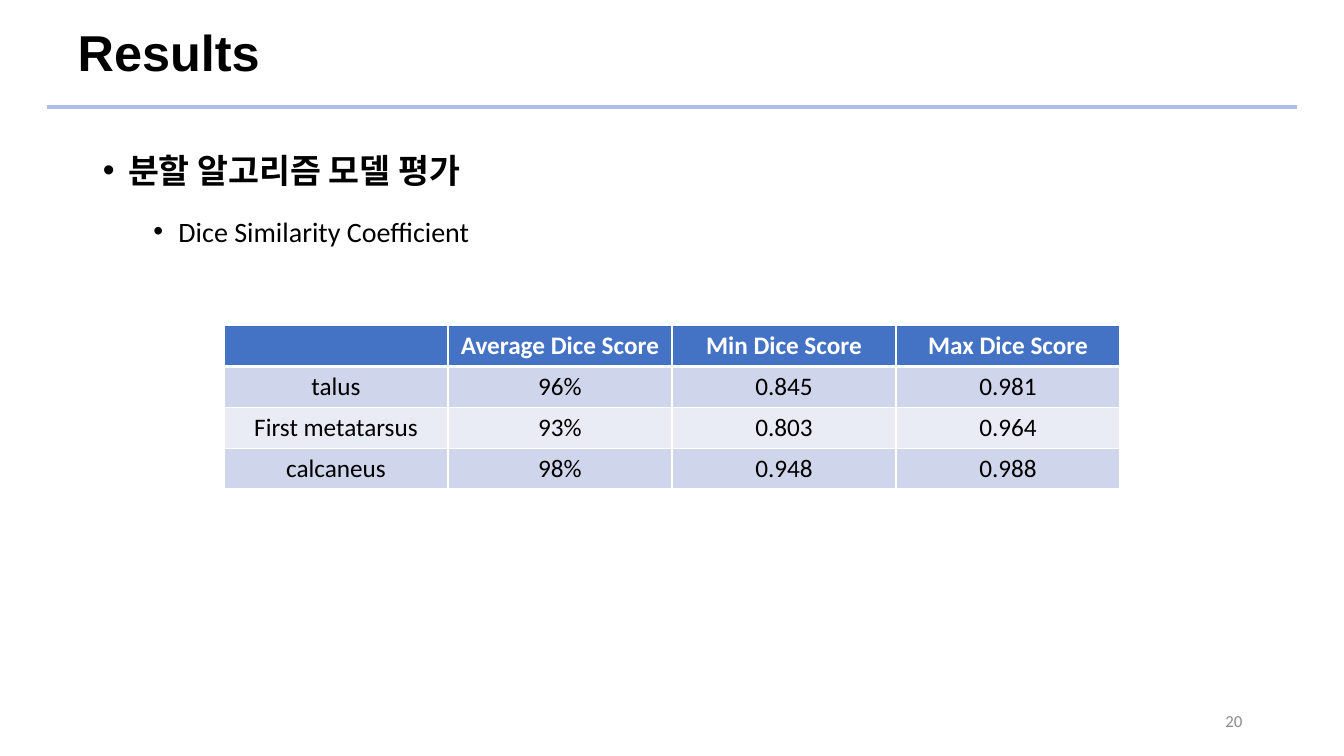
from lxml.etree import SubElement
from pptx import Presentation
from pptx.dml.color import RGBColor
from pptx.enum.shapes import MSO_CONNECTOR
from pptx.enum.text import MSO_ANCHOR, MSO_AUTO_SIZE, PP_ALIGN
from pptx.oxml.ns import qn
from pptx.util import Inches, Pt

BLACK = RGBColor(0x00, 0x00, 0x00)
WHITE = RGBColor(0xFF, 0xFF, 0xFF)
GRAY = RGBColor(0x8C, 0x8C, 0x8C)
RULE_BLUE = RGBColor(0xAB, 0xC0, 0xE4)
HEADER_BLUE = RGBColor(0x44, 0x72, 0xC4)
ODD_ROW = RGBColor(0xCF, 0xD5, 0xEA)
EVEN_ROW = RGBColor(0xE9, 0xEB, 0xF5)


def write_text(paragraph, text, size, font="Calibri", color=BLACK, bold=False,
               align=PP_ALIGN.LEFT, line_spacing=1.0, space_before=0, indent=None):
    if indent is not None:
        properties = paragraph._p.get_or_add_pPr()
        properties.set("marL", str(Inches(indent)))
        properties.set("indent", str(Inches(-0.25)))
        SubElement(properties, qn("a:buFont"), typeface="Arial")
        SubElement(properties, qn("a:buChar"), char="•")
    paragraph.alignment = align
    paragraph.line_spacing = line_spacing
    paragraph.space_before = Pt(space_before)
    run = paragraph.add_run()
    run.text = text
    run.font.size = Pt(size)
    run.font.name = font
    run.font.bold = bold
    run.font.color.rgb = color


def add_border(cell, side, points):
    line = SubElement(cell._tc.get_or_add_tcPr(), qn(f"a:ln{side}"), w=str(Pt(points)))
    fill = SubElement(line, qn("a:solidFill"))
    SubElement(fill, qn("a:srgbClr"), val=str(WHITE))


presentation = Presentation()
presentation.slide_width = Inches(13.33)
presentation.slide_height = Inches(7.5)
slide = presentation.slides.add_slide(presentation.slide_layouts[1])

rule = slide.shapes.add_connector(
    MSO_CONNECTOR.STRAIGHT, Inches(0.47), Inches(1.06), Inches(12.86), Inches(1.06))
rule.line.color.rgb = RULE_BLUE
rule.line.width = Pt(3)
SubElement(rule._element.spPr, qn("a:effectLst"))

title = slide.shapes.title
body = slide.placeholders[1]
page_number = slide.shapes.add_textbox(0, 0, 0, 0)
for shape, bounds, anchor in (
    (title, (0.67, 0.22, 11.5, 0.65), MSO_ANCHOR.MIDDLE),
    (body, (0.92, 1.24, 11.5, 5.44), MSO_ANCHOR.TOP),
    (page_number, (9.42, 6.95, 3, 0.4), MSO_ANCHOR.MIDDLE),
):
    shape.left, shape.top, shape.width, shape.height = map(Inches, bounds)
    shape.text_frame.word_wrap = True
    shape.text_frame.auto_size = MSO_AUTO_SIZE.NONE
    shape.text_frame.vertical_anchor = anchor

write_text(title.text_frame.paragraphs[0], "Results", 36, font="Arial", bold=True,
           line_spacing=0.9)
write_text(body.text_frame.paragraphs[0], "분할 알고리즘 모델 평가", 24, font="Arial",
           bold=True, line_spacing=1.5, indent=0.25)
metric = body.text_frame.add_paragraph()
metric.level = 1
write_text(metric, "Dice Similarity Coefficient", 20, line_spacing=1.5,
           space_before=5, indent=0.75)
write_text(page_number.text_frame.paragraphs[0], "20", 12, color=GRAY,
           align=PP_ALIGN.RIGHT)

scores = (
    ("", "Average Dice Score", "Min Dice Score", "Max Dice Score"),
    ("talus", "96%", "0.845", "0.981"),
    ("First metatarsus", "93%", "0.803", "0.964"),
    ("calcaneus", "98%", "0.948", "0.988"),
)
column_width = presentation.slide_width // 6
table = slide.shapes.add_table(
    len(scores), len(scores[0]), column_width, Inches(3.23),
    column_width * len(scores[0]), Inches(1.62)).table

for row, values in enumerate(scores):
    is_header = row == 0
    row_fill = HEADER_BLUE if is_header else ODD_ROW if row % 2 else EVEN_ROW
    for column, value in enumerate(values):
        cell = table.cell(row, column)
        add_border(cell, "L", 1)
        add_border(cell, "R", 1)
        add_border(cell, "T", 3 if row == 1 else 1)
        add_border(cell, "B", 3 if is_header else 1)
        cell.fill.solid()
        cell.fill.fore_color.rgb = row_fill
        cell.vertical_anchor = MSO_ANCHOR.MIDDLE
        if value:
            write_text(cell.text_frame.paragraphs[0], value, 18, bold=is_header,
                       color=WHITE if is_header else BLACK, align=PP_ALIGN.CENTER)

presentation.save("out.pptx")
